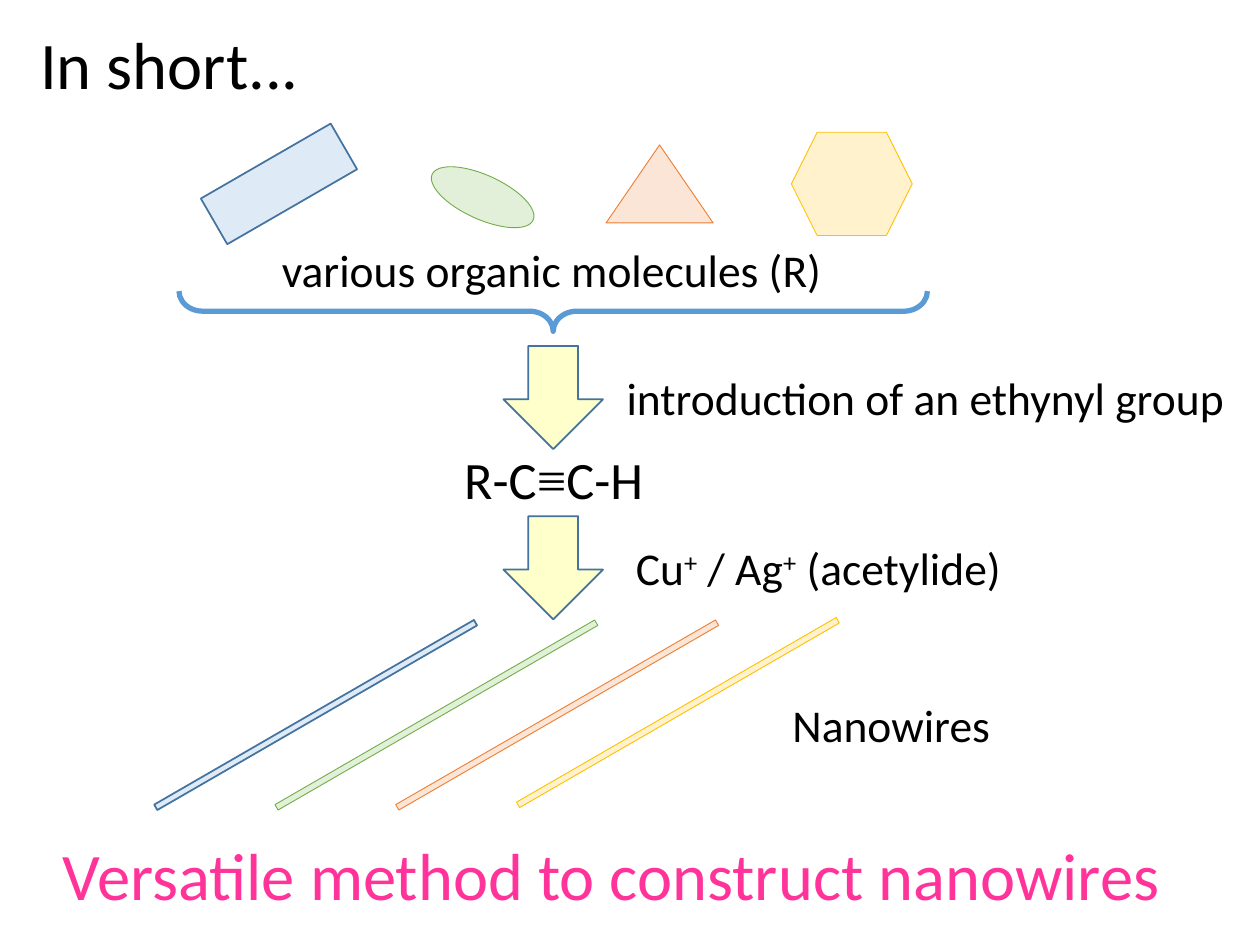
from dataclasses import dataclass

import pptx
import pptx.dml.color
import pptx.enum.shapes
import pptx.enum.text
import pptx.util

Pt = pptx.util.Pt
Shape = pptx.enum.shapes.MSO_SHAPE
Align = pptx.enum.text.PP_ALIGN


@dataclass(frozen=True)
class Palette:
    fill: str | None
    line: str
    line_width: float = 0.5


@dataclass(frozen=True)
class Theme:
    font: str = "Calibri"
    symbol_font: str = "Times New Roman"
    text: str = "000000"
    accent: str = "FF3399"
    title_size: float = 38
    formula_size: float = 30
    label_size: float = 26
    blue: Palette = Palette("DEEBF7", "43739E", 1)
    green: Palette = Palette("E2F0D9", "70AD47")
    orange: Palette = Palette("FBE5D6", "ED7D31")
    gold: Palette = Palette("FFF2CC", "FFC000")
    arrow: Palette = Palette("FFFFCC", "43739E", 1)
    brace: Palette = Palette(None, "5B9BD5", 3)


@dataclass(frozen=True)
class Box:
    left: float
    top: float
    width: float
    height: float


@dataclass(frozen=True)
class Figure:
    kind: Shape
    box: Box
    palette: Palette
    rotation: float = 0


@dataclass(frozen=True)
class Run:
    text: str
    font: str | None = None
    superscript: bool = False


@dataclass(frozen=True)
class Label:
    box: Box
    runs: tuple[Run, ...]
    size: float
    color: str = Theme.text
    align: Align = Align.CENTER


THEME = Theme()

MOLECULES = [
    Figure(Shape.RECTANGLE, Box(116.6, 90, 85.7, 30.2), THEME.blue, 330),
    Figure(Shape.ISOSCELES_TRIANGLE, Box(346.3, 82.8, 61.2, 44.6), THEME.orange),
    Figure(Shape.OVAL, Box(244.1, 100.1, 63.4, 25.2), THEME.green, 24.4),
    Figure(Shape.HEXAGON, Box(452.2, 75.6, 69.1, 59), THEME.gold),
]
BRACE = Figure(Shape.RIGHT_BRACE, Box(304.6, -36, 23, 427.7), THEME.brace, 90)
ARROWS = [
    Figure(Shape.RIGHT_ARROW, Box(286.6, top, 59, 56.9), THEME.arrow, 90)
    for top in (198.7, 296)
]
WIRE_PITCH = 69
WIRES = [
    Figure(Shape.RECTANGLE, Box(74.9 + index * WIRE_PITCH, top, 211, 3.6), palette, 330)
    for index, (palette, top) in enumerate([
        (THEME.blue, 406.8), (THEME.green, 406.8),
        (THEME.orange, 406.8), (THEME.gold, 405.4),
    ])
]

TITLE = Label(Box(15.8, 9.4, 219.6, 53.3), (Run("In short..."),),
              THEME.title_size, align=Align.LEFT)
LABELS = [
    Label(Box(128.2, 134.6, 374.4, 38.9), (Run("various organic molecules (R)"),),
          THEME.label_size),
    Label(Box(206.6, 252, 219.6, 43.9),
          (Run("R-C"), Run("≡", THEME.symbol_font), Run("C-H")), THEME.formula_size),
    Label(Box(345.6, 208.1, 366.5, 38.9), (Run("introduction of an ethynyl group"),),
          THEME.label_size),
    Label(Box(347.8, 305.3, 239.8, 38.9),
          (Run("Cu"), Run("+", superscript=True), Run(" / Ag"),
           Run("+", superscript=True), Run(" (acetylide)")), THEME.label_size),
    Label(Box(404.6, 394.6, 209.5, 38.9), (Run("Nanowires"),), THEME.label_size),
    Label(Box(28.8, 473, 662.4, 53.3), (Run("Versatile method to construct nanowires"),),
          THEME.title_size, THEME.accent, Align.LEFT),
]


def rgb(color: str) -> pptx.dml.color.RGBColor:
    return pptx.dml.color.RGBColor.from_string(color)


def place(shape, box: Box) -> None:
    shape.left, shape.top = Pt(box.left), Pt(box.top)
    shape.width, shape.height = Pt(box.width), Pt(box.height)


def draw_figure(slide, figure: Figure):
    shape = slide.shapes.add_shape(figure.kind, 0, 0, 0, 0)
    place(shape, figure.box)
    shape.rotation = figure.rotation
    shape.shadow.inherit = False
    if figure.palette.fill is None:
        shape.fill.background()
    else:
        shape.fill.solid()
        shape.fill.fore_color.rgb = rgb(figure.palette.fill)
    shape.line.color.rgb = rgb(figure.palette.line)
    shape.line.width = Pt(figure.palette.line_width)
    return shape


def write_label(shape, label: Label) -> None:
    place(shape, label.box)
    frame = shape.text_frame
    frame.word_wrap = True
    frame.auto_size = pptx.enum.text.MSO_AUTO_SIZE.NONE
    frame.vertical_anchor = pptx.enum.text.MSO_ANCHOR.TOP
    paragraph = frame.paragraphs[0]
    paragraph.alignment = label.align
    for part in label.runs:
        run = paragraph.add_run()
        run.text = part.text
        run.font.name = part.font or THEME.font
        run.font.size = Pt(label.size)
        run.font.color.rgb = rgb(label.color)
        if part.superscript:
            run._r.get_or_add_rPr().set("baseline", "30000")


def main() -> None:
    presentation = pptx.Presentation()
    presentation.slide_width, presentation.slide_height = Pt(720), Pt(540)
    title_only_layout = presentation.slide_layouts[5]
    slide = presentation.slides.add_slide(title_only_layout)
    write_label(slide.shapes.title, TITLE)
    for figure in MOLECULES + ARROWS + WIRES:
        draw_figure(slide, figure)
    brace = draw_figure(slide, BRACE)
    brace.adjustments[0] = 0.59
    for label in LABELS:
        write_label(slide.shapes.add_textbox(0, 0, 0, 0), label)
    presentation.save("out.pptx")


if __name__ == "__main__":
    main()
